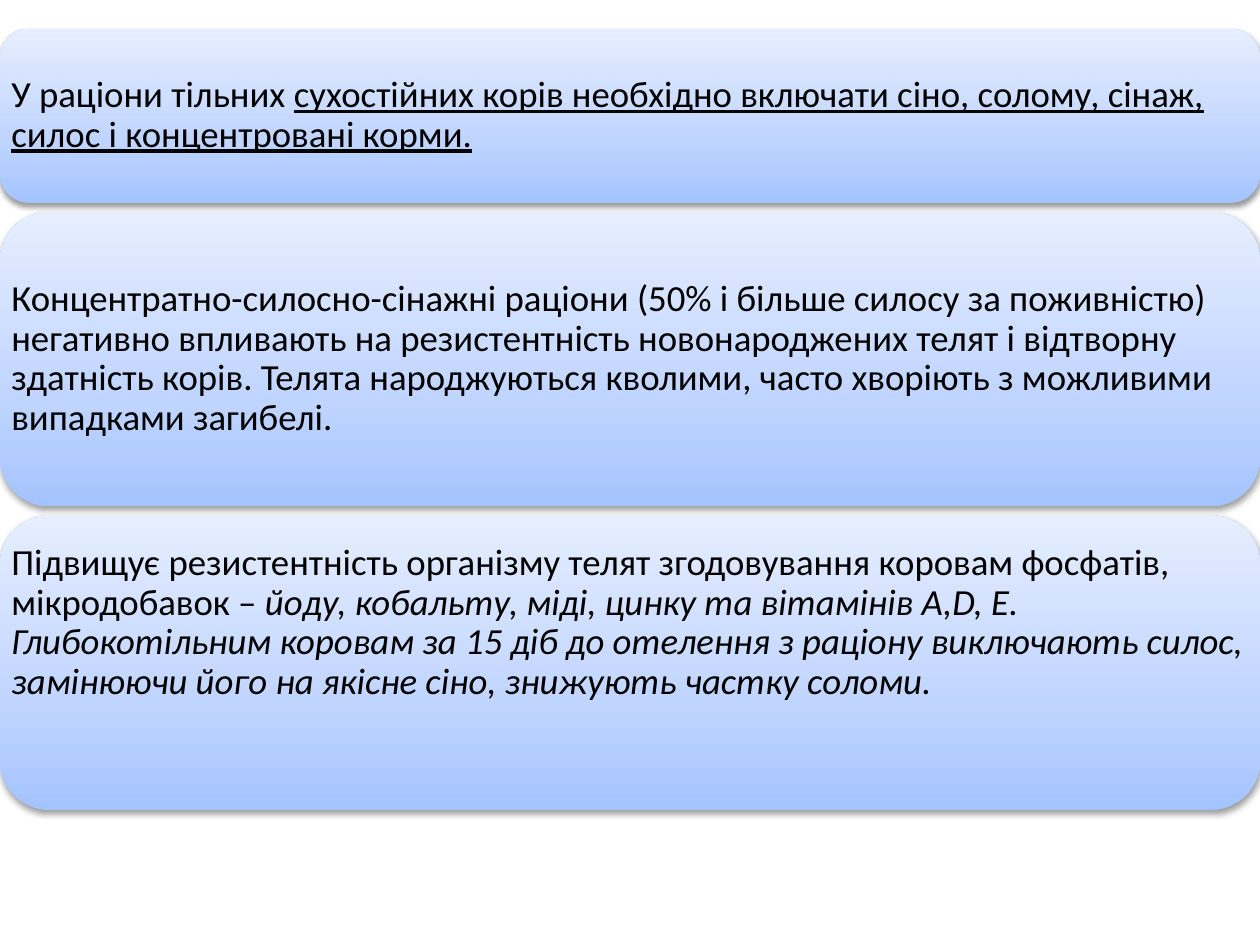
import copy
from dataclasses import dataclass

import lxml.etree
import pptx
import pptx.dml.color
import pptx.enum.shapes
import pptx.enum.text
import pptx.oxml.ns
import pptx.util
from pptx.util import Cm


@dataclass(frozen=True)
class Theme:
    font: str = "Calibri"
    size: int = 21
    text: str = "000000"
    shadow: str = "000000"
    # Panel gradient, from the bottom edge upwards
    gradient: tuple = ((0, "A4C4FF"), (0.35, "BFD4FF"), (1, "E6EEFF"))


THEME = Theme()
SLIDE_WIDTH, SLIDE_HEIGHT = Cm(25.4), Cm(19.05)
FIRST_TOP, PANEL_GAP, INSET = Cm(0.58), Cm(0.18), Cm(0.23)

# Each panel: height, extra space below the text, and (text, style) spans
PANELS = [
    (Cm(3.51), Cm(0), [
        ("У раціони тільних ", None),
        ("сухостійних корів необхідно включати сіно, солому, сінаж, "
         "силос і концентровані корми.", "underline"),
    ]),
    (Cm(5.94), Cm(0), [
        ("Концентратно-силосно-сінажні раціони (50% і більше силосу за "
         "поживністю) негативно впливають на резистентність новонароджених "
         "телят і відтворну здатність корів. Телята народжуються кволими, "
         "часто хворіють з можливими випадками загибелі.", None),
    ]),
    (Cm(5.94), Cm(1.6), [
        ("Підвищує резистентність організму телят згодовування коровам "
         "фосфатів, мікродобавок – ", None),
        ("йоду, кобальту, міді, цинку та вітамінів А,D, Е. Глибокотільним "
         "коровам за 15 діб до отелення з раціону виключають силос, "
         "замінюючи його на якісне сіно, знижують частку соломи.", "italic"),
    ]),
]


def rgb(value):
    return pptx.dml.color.RGBColor.from_string(value)


def set_gradient(shape):
    shape.fill.gradient()
    shape.fill.gradient_angle = 90
    # The default gradient has two stops; add the third
    stop_list = shape.element.spPr.find(".//" + pptx.oxml.ns.qn("a:gsLst"))
    stop_list.append(copy.deepcopy(stop_list[-1]))
    for stop, (position, color) in zip(shape.fill.gradient_stops, THEME.gradient):
        stop.position = position
        stop.color.rgb = rgb(color)


def set_shadow(shape):
    shape.shadow.inherit = False
    qn = pptx.oxml.ns.qn
    effects = shape.element.spPr.find(qn("a:effectLst"))
    shadow = lxml.etree.SubElement(
        effects, qn("a:outerShdw"), blurRad="40000", dist="20000",
        dir="5400000", rotWithShape="0")
    color = lxml.etree.SubElement(shadow, qn("a:srgbClr"), val=THEME.shadow)
    lxml.etree.SubElement(color, qn("a:alpha"), val="38000")


def add_panel(page, left, top, width, height, space_below, spans):
    # Rounded background
    panel = page.shapes.add_shape(
        pptx.enum.shapes.MSO_SHAPE.ROUNDED_RECTANGLE, left, top, width, height)
    panel.line.fill.background()
    set_gradient(panel)
    set_shadow(panel)

    # Text over the full panel width
    frame = page.shapes.add_textbox(left, top, width, height).text_frame
    frame.word_wrap = True
    frame.vertical_anchor = pptx.enum.text.MSO_ANCHOR.MIDDLE
    frame.margin_left = frame.margin_right = frame.margin_top = INSET
    frame.margin_bottom = INSET + space_below
    para = frame.paragraphs[0]
    para.line_spacing = 0.9
    for text, style in spans:
        span = para.add_run()
        span.text = text
        span.font.name = THEME.font
        span.font.size = pptx.util.Pt(THEME.size)
        span.font.color.rgb = rgb(THEME.text)
        if style:
            setattr(span.font, style, True)


def add_panel_stack(page, left, top, width):
    for height, space_below, spans in PANELS:
        add_panel(page, left, top, width, height, space_below, spans)
        top += height + PANEL_GAP


def main():
    deck = pptx.Presentation()
    deck.slide_width, deck.slide_height = SLIDE_WIDTH, SLIDE_HEIGHT
    page = deck.slides.add_slide(deck.slide_layouts[6])
    add_panel_stack(page, Cm(0), FIRST_TOP, SLIDE_WIDTH)
    deck.save("out.pptx")


if __name__ == "__main__":
    main()
